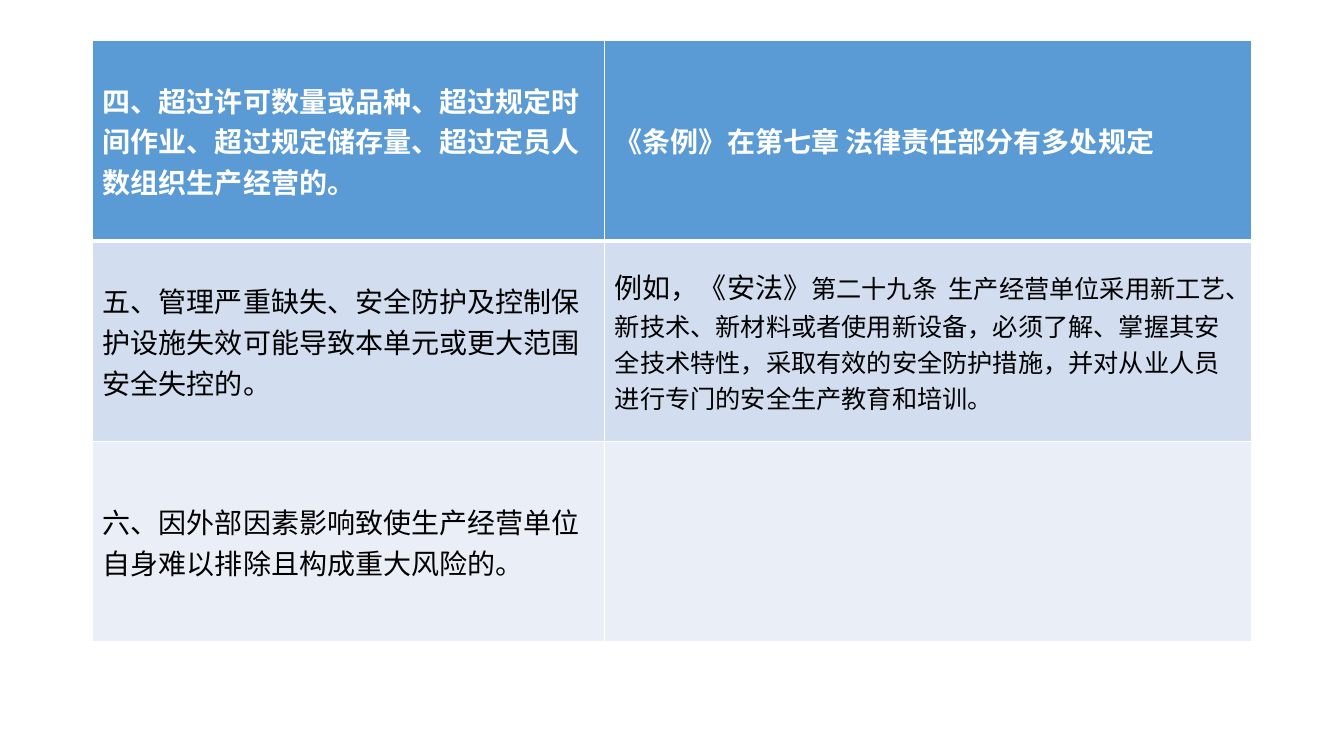
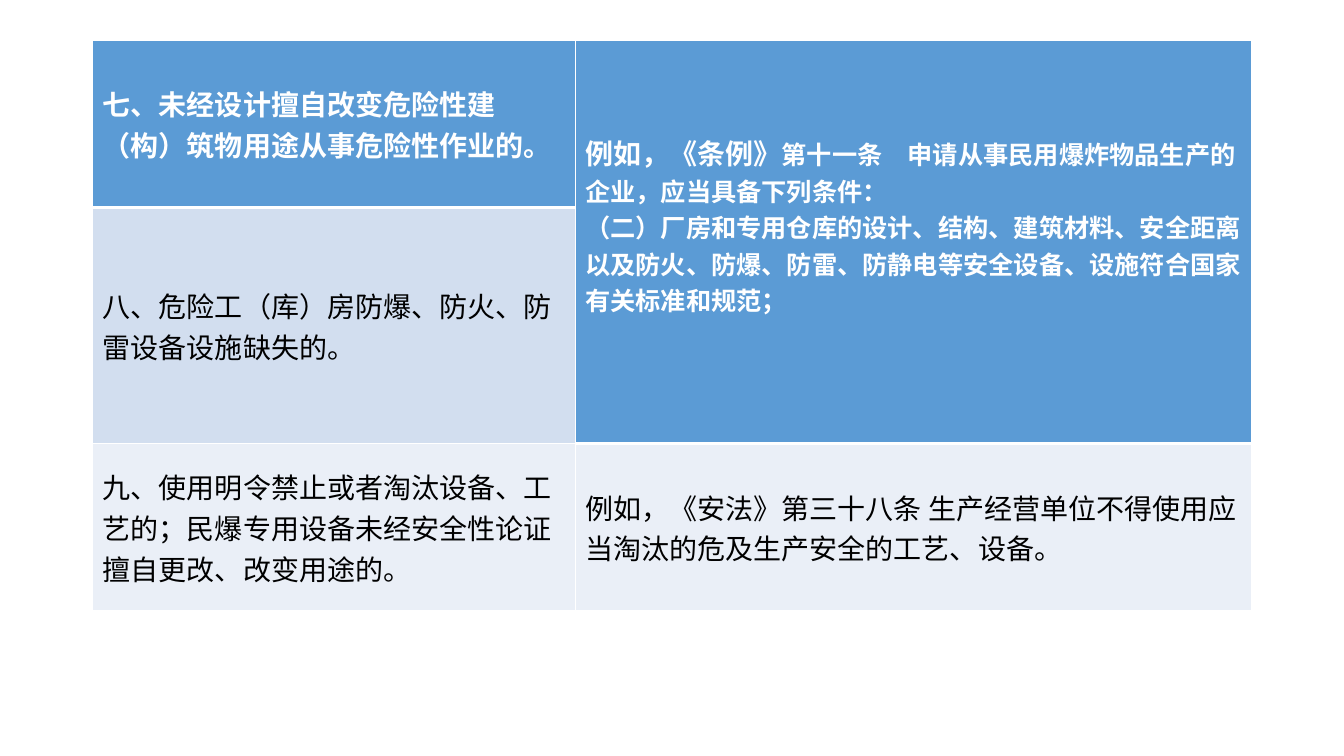
from lxml.etree import SubElement
from pptx import Presentation
from pptx.dml.color import RGBColor
from pptx.enum.text import MSO_ANCHOR
from pptx.oxml import parse_xml
from pptx.oxml.ns import nsdecls, qn
from pptx.util import Inches, Pt

COLORS = {
    "header": "5B9BD5",
    "band": "D2DEEF",
    "light": "EAEFF7",
    "border": "FFFFFF",
    "header_text": "FFFFFF",
    "body_text": "000000",
}
FONT = "Noto Sans CJK SC"
LEAD_SIZE, DETAIL_SIZE = 20, 18
THIN, THICK = 1, 3
BLANK_LAYOUT = 6
GRID_COLUMNS, GRID_ROWS = 100, 75
TABLE_LEFT, TABLE_TOP = 6.9, 4


class Deck:
    """Holds the style and the current slide; lengths are grid columns and rows."""

    def __init__(self):
        self.presentation = Presentation()
        self.presentation.slide_width = Inches(13.33)
        self.presentation.slide_height = Inches(7.5)
        self.slide = None

    def x(self, columns):
        return round(self.presentation.slide_width * columns / GRID_COLUMNS)

    def y(self, rows):
        return round(self.presentation.slide_height * rows / GRID_ROWS)

    def add_slide(self):
        layout = self.presentation.slide_layouts[BLANK_LAYOUT]
        self.slide = self.presentation.slides.add_slide(layout)

    def add_table(self, widths, heights, contents, merge=None):
        """Each cell lists paragraphs, each a (lead, detail) pair; merge is two corners."""
        table = self.slide.shapes.add_table(
            len(heights), len(widths), self.x(TABLE_LEFT), self.y(TABLE_TOP),
            self.x(sum(widths)), self.y(sum(heights))).table
        table.horz_banding = False
        for column, width in zip(table.columns, widths):
            column.width = self.x(width)
        for row, height in zip(table.rows, heights):
            row.height = self.y(height)
        if merge:
            first, last = merge
            table.cell(*first).merge(table.cell(*last))
        for row_index, row_contents in enumerate(contents):
            for column_index, paragraphs in enumerate(row_contents):
                cell = table.cell(row_index, column_index)
                header = row_index == 0 or cell.is_spanned
                self.style_cell(cell, row_index, header)
                self.write_cell(cell, paragraphs, header)
        return table

    def style_cell(self, cell, row_index, header):
        fill = "header" if header else ("light", "band")[row_index % 2]
        cell.fill.solid()
        cell.fill.fore_color.rgb = RGBColor.from_string(COLORS[fill])
        cell.vertical_anchor = MSO_ANCHOR.MIDDLE
        borders = {"lnL": THIN, "lnR": THIN}
        if row_index == 0:
            borders["lnT"] = THIN
        borders["lnB"] = THICK if header else THIN
        properties = cell._tc.get_or_add_tcPr()
        for position, (tag, width) in enumerate(borders.items()):
            properties.insert(position, parse_xml(
                f'<a:{tag} {nsdecls("a")} w="{Pt(width)}"><a:solidFill>'
                f'<a:srgbClr val="{COLORS["border"]}"/></a:solidFill></a:{tag}>'))

    def write_cell(self, cell, paragraphs, header):
        frame = cell.text_frame
        for index, (lead, detail) in enumerate(paragraphs):
            paragraph = frame.add_paragraph() if index else frame.paragraphs[0]
            for text, size in ((lead, LEAD_SIZE), (detail, DETAIL_SIZE)):
                if text:
                    run = paragraph.add_run()
                    run.text = text
                    self.style_font(run.font, size, header)

    def style_font(self, font, size, header):
        font.size = Pt(size)
        font.bold = header
        color = COLORS["header_text" if header else "body_text"]
        font.color.rgb = RGBColor.from_string(color)
        font.name = FONT
        SubElement(font._element, qn("a:ea"), typeface=FONT)


def build_violations_four_to_six(deck):
    deck.add_slide()
    deck.add_table([38.1, 48.15], [19.9] * 3, [
        [[("四、超过许可数量或品种、超过规定时间作业、超过规定储存量、超过定员人数组织生产经营的。", "")],
         [("《条例》在第七章 法律责任部分有多处规定", "")]],
        [[("五、管理严重缺失、安全防护及控制保护设施失效可能导致本单元或更大范围安全失控的。", "")],
         [("例如，《安法》",
           "第二十九条  生产经营单位采用新工艺、新技术、新材料或者使用新设备，必须了解、"
           "掌握其安全技术特性，采取有效的安全防护措施，并对从业人员进行专门的安全生产教育和培训。")]],
        [[("六、因外部因素影响致使生产经营单位自身难以排除且构成重大风险的。", "")], []],
    ])


def build_violations_seven_to_nine(deck):
    deck.add_slide()
    table = deck.add_table([35.9, 50.35], [16.6, 23.4, 16.6], [
        [[("七、未经设计擅自改变危险性建（构）筑物用途从事危险性作业的。", "")],
         [("例如，《条例》", "第十一条　申请从事民用爆炸物品生产的企业，应当具备下列条件："),
          ("", "（二）厂房和专用仓库的设计、结构、建筑材料、安全距离以及防火、防爆、防雷、"
               "防静电等安全设备、设施符合国家有关标准和规范；")]],
        [[("八、危险工（库）房防爆、防火、防雷设备设施缺失的。", "")], []],
        [[("九、使用明令禁止或者淘汰设备、工艺的；民爆专用设备未经安全性论证擅自更改、改变用途的。", "")],
         [("例如，《安法》第三十八条 生产经营单位不得使用应当淘汰的危及生产安全的工艺、设备。", "")]],
    ], merge=((0, 1), (1, 1)))
    table.cell(0, 1).margin_bottom = deck.y(3.9)


def main():
    deck = Deck()
    build_violations_four_to_six(deck)
    build_violations_seven_to_nine(deck)
    deck.presentation.save("out.pptx")


if __name__ == "__main__":
    main()
